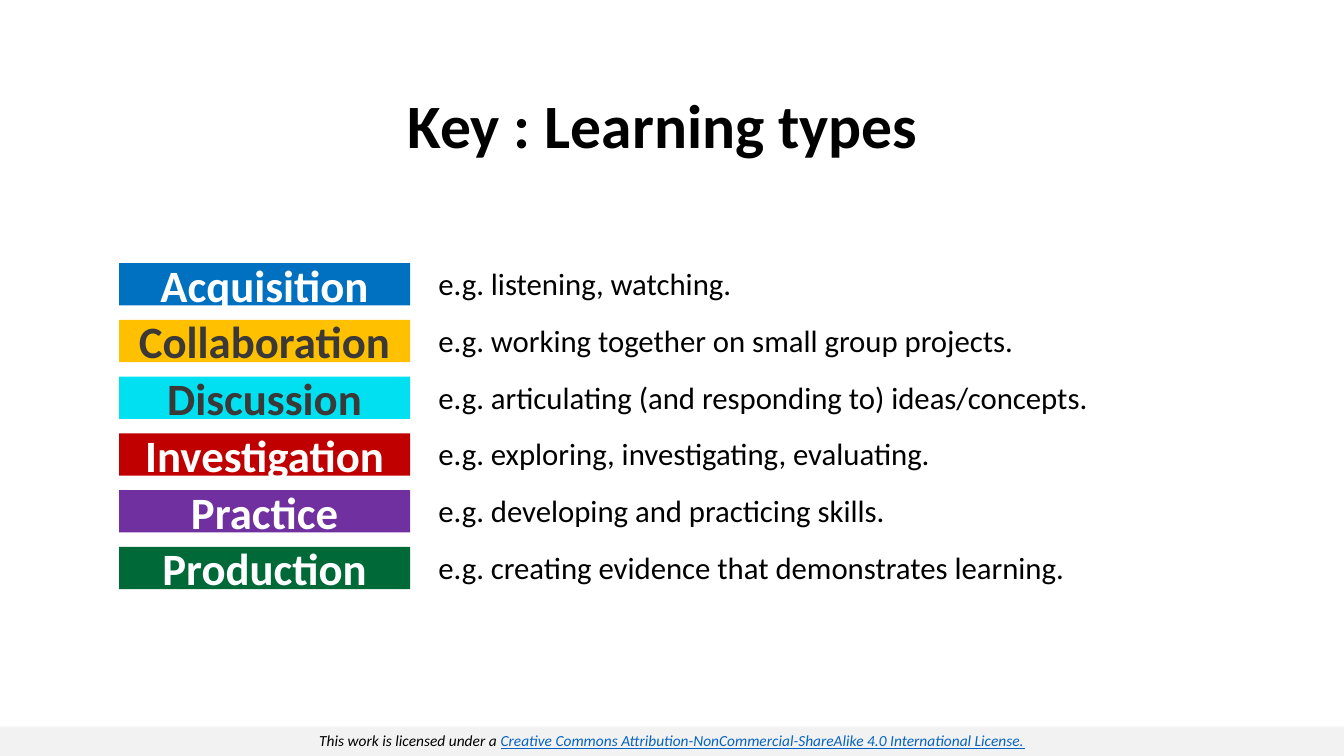
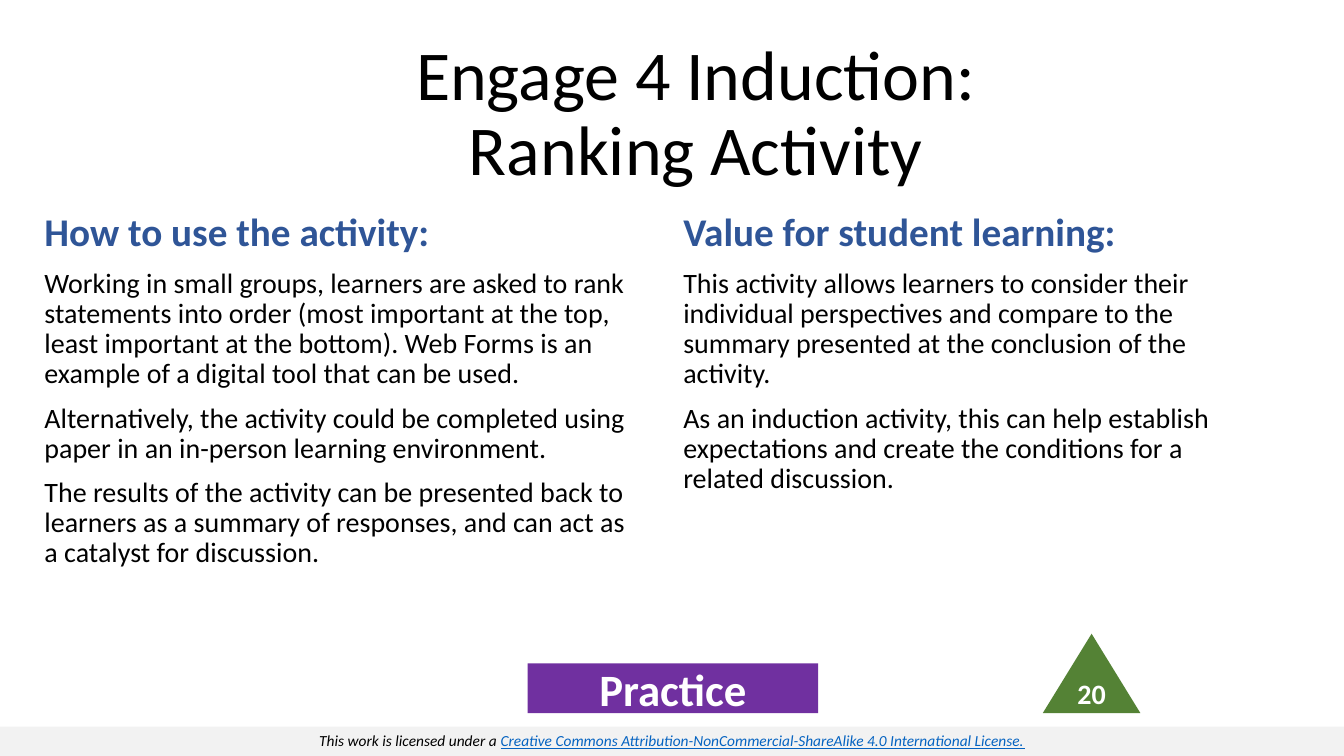
from pptx import Presentation
from pptx import util as u
from pptx.dml.color import RGBColor
from pptx.enum import shapes, text

C = {
    "black": "000000", "white": "FFFFFF", "dark": "3B3838",
    "band": "F2F2F2", "link": "0563C1", "heading": "2F5597",
    "blue": "0070C0", "amber": "FFC000", "cyan": "00E0F0",
    "red": "C00000", "purple": "7030A0", "green": "006938",
    "badge": "548235",
}
W, H = 33.87, 19.05
LEFT, CENTER = text.PP_ALIGN.LEFT, text.PP_ALIGN.CENTER
TOP, MIDDLE = text.MSO_ANCHOR.TOP, text.MSO_ANCHOR.MIDDLE

TITLE = {"size": 44, "bold": True, "color": "black"}
ACTIVITY_TITLE = {"size": 50, "bold": False, "color": "black"}
CHIP = {"size": 32, "bold": True}
EXAMPLE = {"size": 22, "color": "black"}
HEADING = {"size": 28, "bold": True, "color": "heading"}
BODY = {"size": 20, "color": "black"}
BADGE = {"size": 20, "bold": True, "color": "white"}
NOTICE = {"size": 11, "italic": True, "color": "black"}
LINK = {**NOTICE, "color": "link", "underline": True}
TIGHT = {"line_spacing": 0.9, "space_before": u.Pt(0)}
SPACED = {"line_spacing": 0.9, "space_before": u.Pt(10)}

TYPES = [
    ("Acquisition", "blue", "white", "e.g. listening, watching."),
    ("Collaboration", "amber", "dark",
     "e.g. working together on small group projects."),
    ("Discussion", "cyan", "dark",
     "e.g. articulating (and responding to) ideas/concepts."),
    ("Investigation", "red", "white",
     "e.g. exploring, investigating, evaluating."),
    ("Practice", "purple", "white", "e.g. developing and practicing skills."),
    ("Production", "green", "white",
     "e.g. creating evidence that demonstrates learning."),
]
USE = [
    "Working in small groups, learners are asked to rank statements into order "
    "(most important at the top, least important at the bottom). Web Forms is an "
    "example of a digital tool that can be used.",
    "Alternatively, the activity could be completed using paper in an in-person "
    "learning environment.",
    "The results of the activity can be presented back to learners as a summary "
    "of responses, and can act as a catalyst for discussion.",
]
VALUE = [
    "This activity allows learners to consider their individual perspectives and "
    "compare to the summary presented at the conclusion of the activity.",
    "As an induction activity, this can help establish expectations and create "
    "the conditions for a related discussion.",
]


def rgb(name):
    return RGBColor.from_string(C[name])


def cm(box):
    return [u.Cm(v) for v in box]


def style(r, fmt):
    r.font.name = "Calibri"
    for key, value in fmt.items():
        if key == "color":
            r.font.color.rgb = rgb(value)
        else:
            setattr(r.font, key, u.Pt(value) if key == "size" else value)


def write(sp, paragraphs, fmt, align=LEFT, anchor=TOP, para=None, wrap=True):
    tf = sp.text_frame
    for key, value in {"word_wrap": wrap, "vertical_anchor": anchor,
                       "auto_size": text.MSO_AUTO_SIZE.NONE}.items():
        setattr(tf, key, value)
    for i, words in enumerate(paragraphs):
        p = tf.add_paragraph() if i else tf.paragraphs[0]
        p.text = words
        for key, value in {"alignment": align, **(para or {})}.items():
            setattr(p, key, value)
        for r in p.runs:
            style(r, fmt)


def block(s, box, fill, kind=shapes.MSO_SHAPE.RECTANGLE):
    sp = s.shapes.add_shape(kind, *cm(box))
    sp.shadow.inherit = False
    sp.fill.solid()
    sp.fill.fore_color.rgb = rgb(fill)
    sp.line.fill.background()
    return sp


def textbox(s, box, paragraphs, fmt, **kw):
    write(s.shapes.add_textbox(*cm(box)), paragraphs, fmt, **kw)


def chip(s, box, label, fill, color):
    write(block(s, box, fill), [label], {**CHIP, "color": color}, CENTER, MIDDLE)


def footer(s, box):
    sp = block(s, box, "band")
    write(sp, ["This work is licensed under a "], NOTICE, CENTER)
    r = sp.text_frame.paragraphs[0].add_run()
    r.text = ("Creative Commons Attribution-NonCommercial-ShareAlike 4.0 "
              "International License.")
    style(r, LINK)


def base_slide(prs, title, box, fmt):
    s = prs.slides.add_slide(prs.slide_layouts[5])
    footer(s, (0, 18.31, W, 0.74))
    sp = s.shapes.title
    sp.left, sp.top, sp.width, sp.height = cm(box)
    write(sp, [title], fmt, CENTER, MIDDLE, TIGHT)
    return s


def type_list(s, box):
    x, y, w, h = box
    chip_w, chip_h, text_x = 7.34, 1.07, 7.8
    pitch = (h - chip_h) / (len(TYPES) - 1)
    for i, (label, fill, color, example) in enumerate(TYPES):
        top = y + i * pitch
        chip(s, (x, top, chip_w, chip_h), label, fill, color)
        textbox(s, (x + text_x, top - 0.08, w - text_x, 1.2), [example], EXAMPLE)


def column(s, box, heading, paragraphs):
    x, y, w, h = box
    head_h = 1.52
    textbox(s, (x, y, w, head_h), [heading], HEADING, anchor=MIDDLE, para=TIGHT)
    textbox(s, (x, y + head_h, w, h - head_h), paragraphs, BODY, para=SPACED)


def badge(s, box, number):
    sp = block(s, box, "badge", shapes.MSO_SHAPE.ISOSCELES_TRIANGLE)
    write(sp, [number], BADGE, CENTER, MIDDLE, wrap=False)


def key_slide(prs):
    s = base_slide(prs, "Key : Learning types", (5.93, 1.4, 21.56, 3.68), TITLE)
    type_list(s, (3, 6.63, 25.27, 8.22))


def activity_slide(prs):
    s = base_slide(prs, "Engage 4 Induction:\vRanking Activity",
                   (6.76, 1.07, 21.56, 3.68), ACTIVITY_TITLE)
    column(s, (0.87, 5.13, 15.62, 11.04), "How to use the activity:", USE)
    column(s, (16.97, 5.13, 14.4, 11.04), "Value for student learning:", VALUE)
    chip(s, (13.3, 16.72, 7.32, 1.25), "Practice", "purple", "white")
    badge(s, (26.28, 15.97, 2.46, 2), "20")


def main():
    prs = Presentation()
    prs.slide_width, prs.slide_height = u.Cm(W), u.Cm(H)
    key_slide(prs)
    activity_slide(prs)
    prs.save("out.pptx")


if __name__ == "__main__":
    main()
